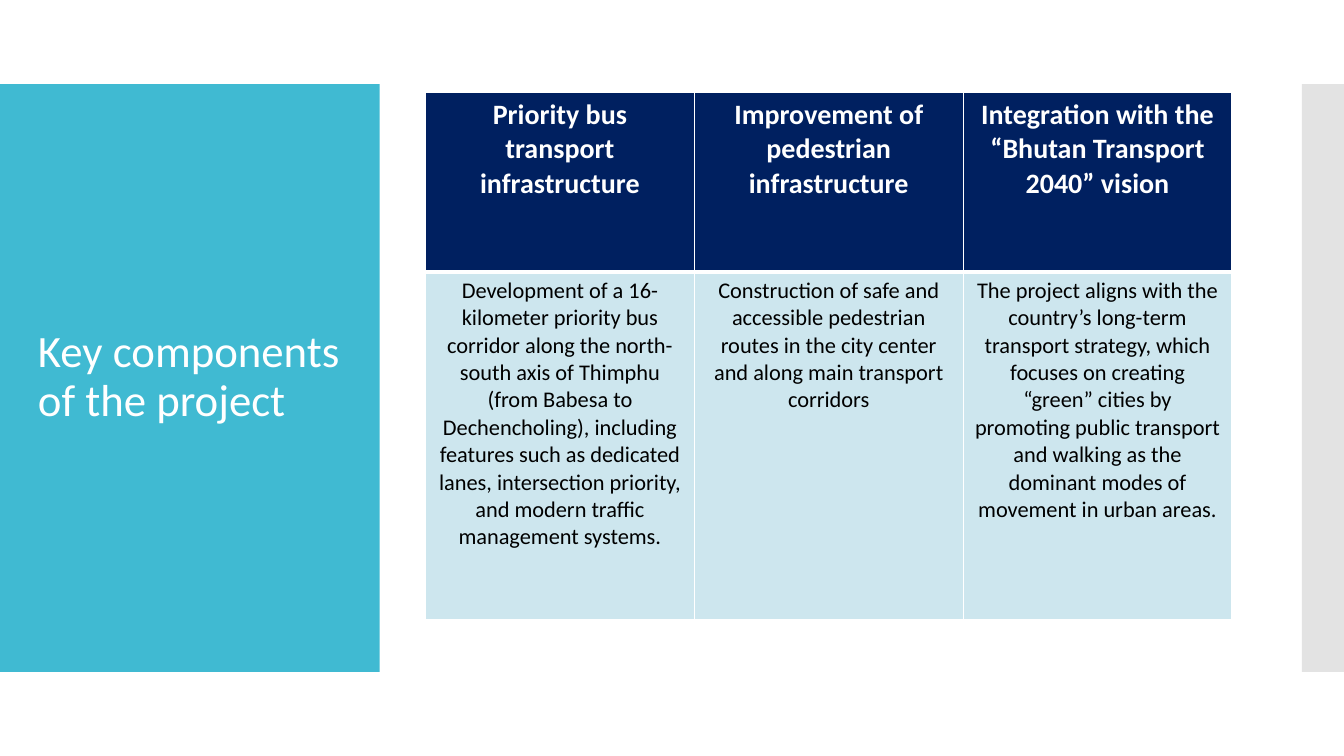
"""Build the slide on the key components of the project."""
import pptx
import pptx.util
import pptx.dml.color
import pptx.enum.shapes
import pptx.enum.text
import pptx.oxml
import pptx.oxml.ns

Pt = pptx.util.Pt
RGB = pptx.dml.color.RGBColor
ALIGN = pptx.enum.text.PP_ALIGN
ANCHOR = pptx.enum.text.MSO_ANCHOR

WHITE = RGB(0xFF, 0xFF, 0xFF)
BLACK = RGB(0, 0, 0)
TEAL = RGB(0x40, 0xBA, 0xD2)
GREY = RGB(0xC8, 0xC8, 0xC8)
NAVY = RGB(0x00, 0x20, 0x60)
PALE_BLUE = RGB(0xCD, 0xE6, 0xEE)

TITLE = "Key components of the project"
COMPONENTS = [
    ("Priority bus transport infrastructure",
     "Development of a 16-kilometer priority bus corridor along the north-south axis of "
     "Thimphu (from Babesa to Dechencholing), including features such as dedicated lanes, "
     "intersection priority, and modern traffic management systems."),
    ("Improvement of pedestrian infrastructure",
     "Construction of safe and accessible pedestrian routes in the city center and along "
     "main transport corridors"),
    ("Integration with the “Bhutan Transport 2040” vision",
     "The project aligns with the country’s long-term transport strategy, which focuses on "
     "creating “green” cities by promoting public transport and walking as the dominant "
     "modes of movement in urban areas."),
]
PANELS = [(0, 271.2, TEAL, 100), (930, 30, GREY, 50)]
PANEL_TOP, PANEL_HEIGHT = 60, 420
TITLE_BOX = (20, 88.5, 232, 362.5)
TABLE_LEFT, TABLE_TOP, COLUMN_WIDTH = 304, 66.3, 192
ROWS = [
    {"height": 128, "fill": NAVY, "edges": {"L": 1, "R": 1, "T": 1, "B": 3},
     "font": {"size": Pt(20), "bold": True}, "color": WHITE},
    {"height": 248, "fill": PALE_BLUE, "edges": {"L": 1, "R": 1, "T": 3, "B": 1},
     "font": {"size": Pt(16), "bold": False}, "color": BLACK},
]


def write(tf, text, font, color, align, spacing=None):
    tf.word_wrap = True
    p = tf.paragraphs[0]
    p.alignment, p.line_spacing = align, spacing
    r = p.add_run()
    r.text = text
    for name, value in {"name": "Calibri", **font}.items():
        setattr(r.font, name, value)
    r.font.color.rgb = color


def add_panel(s, left, width, color, opacity):
    sp = s.shapes.add_shape(pptx.enum.shapes.MSO_SHAPE.RECTANGLE,
                            Pt(left), Pt(PANEL_TOP), Pt(width), Pt(PANEL_HEIGHT))
    sp.shadow.inherit = False
    sp.line.fill.background()
    sp.fill.solid()
    sp.fill.fore_color.rgb = color
    if opacity < 100:
        clr = sp.fill._xPr.find(".//" + pptx.oxml.ns.qn("a:srgbClr"))
        clr.append(pptx.oxml.parse_xml(
            f'<a:alpha {pptx.oxml.ns.nsdecls("a")} val="{opacity * 1000}"/>'))


def add_borders(cell, edges):
    for i, (side, width) in enumerate(edges.items()):
        cell._tc.get_or_add_tcPr().insert(i, pptx.oxml.parse_xml(
            f'<a:ln{side} {pptx.oxml.ns.nsdecls("a")} w="{Pt(width)}">'
            f'<a:solidFill><a:srgbClr val="{WHITE}"/></a:solidFill></a:ln{side}>'))


def add_components_table(s):
    columns = len(COMPONENTS)
    height = sum(row["height"] for row in ROWS)
    table = s.shapes.add_table(len(ROWS), columns, Pt(TABLE_LEFT), Pt(TABLE_TOP),
                               Pt(columns * COLUMN_WIDTH), Pt(height)).table
    for i, row in enumerate(ROWS):
        table.rows[i].height = Pt(row["height"])
        for j, component in enumerate(COMPONENTS):
            table.columns[j].width = Pt(COLUMN_WIDTH)
            cell = table.cell(i, j)
            cell.fill.solid()
            cell.fill.fore_color.rgb = row["fill"]
            add_borders(cell, row["edges"])
            write(cell.text_frame, component[i], row["font"], row["color"], ALIGN.CENTER)


def main():
    prs = pptx.Presentation()
    prs.slide_width, prs.slide_height = Pt(960), Pt(540)
    s = prs.slides.add_slide(prs.slide_layouts[6])
    for panel in PANELS:
        add_panel(s, *panel)
    add_components_table(s)
    tf = s.shapes.add_textbox(*map(Pt, TITLE_BOX)).text_frame
    tf.vertical_anchor = ANCHOR.MIDDLE
    write(tf, TITLE, {"size": Pt(32)}, WHITE, ALIGN.LEFT, 0.9)
    prs.save("out.pptx")


if __name__ == "__main__":
    main()
